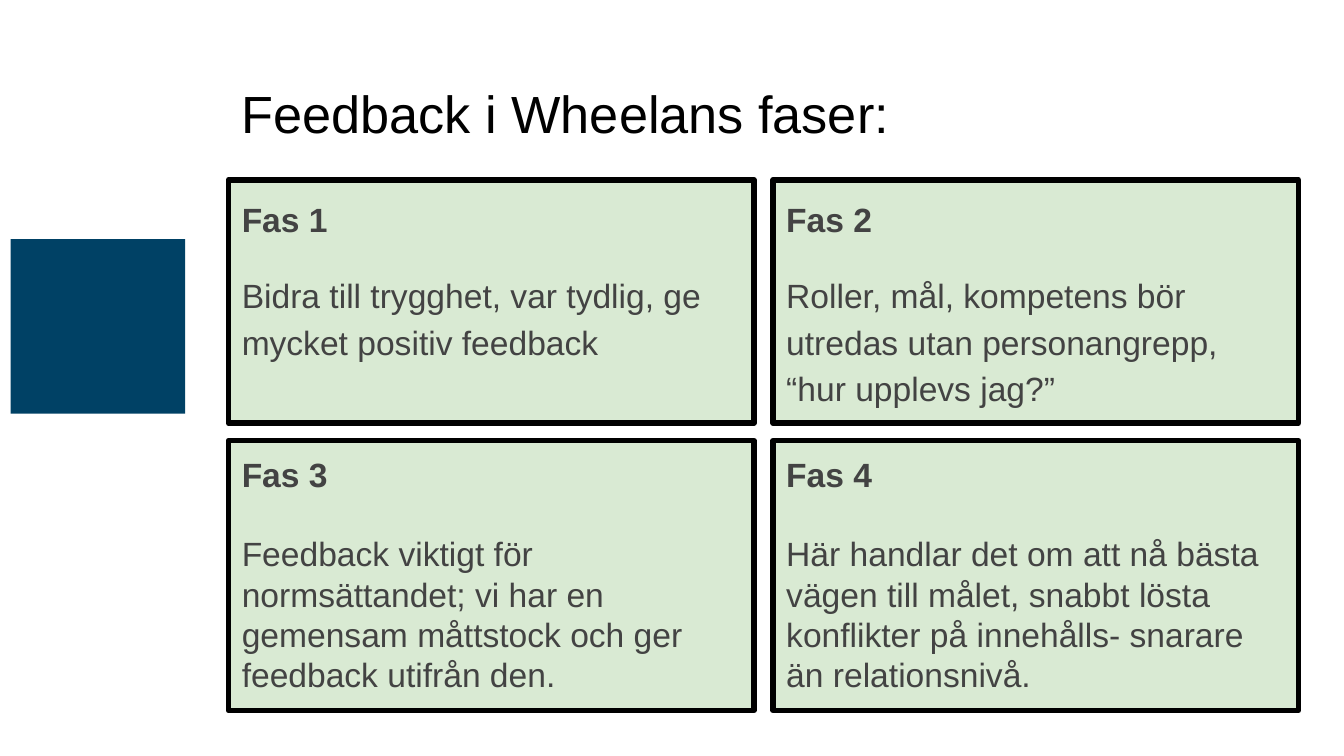
from pptx import Presentation
from pptx.dml.color import RGBColor
from pptx.enum.shapes import MSO_SHAPE
from pptx.enum.text import MSO_ANCHOR, MSO_AUTO_SIZE, PP_ALIGN
from pptx.oxml.ns import qn
from pptx.util import Cm, Pt
from lxml import etree

RECT = MSO_SHAPE.RECTANGLE
TOP, MIDDLE = MSO_ANCHOR.TOP, MSO_ANCHOR.MIDDLE
LEFT = PP_ALIGN.LEFT
NO_FIT = MSO_AUTO_SIZE.NONE

BLACK = RGBColor(0x00, 0x00, 0x00)
GREY = RGBColor(0x43, 0x43, 0x43)
GREEN = RGBColor(0xD9, 0xEA, 0xD3)
NAVY = RGBColor(0x00, 0x41, 0x65)

INSET = Cm(0.25)
TITLE_FONT = {"name": "Arial", "size": Pt(28), "bold": False}
BODY_FONT = {"name": "Arial", "size": Pt(18), "bold": False}
HEAD_FONT = {**BODY_FONT, "bold": True}
LOOSE = {"line_spacing": 1.15, "space_before": Pt(16)}
TIGHT = {"line_spacing": 1.0, "space_before": Pt(21)}

LEFT_EDGE, COLUMN_STEP, CARD_WIDTH = 4.32, 10.29, 9.93
ROWS = [
    (3.4, 4.6, LOOSE, [
        ("Fas 1", "Bidra till trygghet, var tydlig, ge mycket positiv feedback"),
        ("Fas 2", "Roller, mål, kompetens bör utredas utan personangrepp, “hur upplevs jag?”"),
    ]),
    (8.33, 5.1, TIGHT, [
        ("Fas 3", "Feedback viktigt för normsättandet; vi har en gemensam måttstock "
                  "och ger feedback utifrån den."),
        ("Fas 4", "Här handlar det om att nå bästa vägen till målet, snabbt lösta "
                  "konflikter på innehålls- snarare än relationsnivå."),
    ]),
]


def apply(target, values):
    """Set each named attribute on the target."""
    for name, value in values.items():
        setattr(target, name, value)


def prepare_frame(tf, anchor):
    """Give a text frame the common insets, wrapping and anchor."""
    apply(tf, {
        "word_wrap": True, "auto_size": NO_FIT, "vertical_anchor": anchor,
        "margin_left": INSET, "margin_right": INSET,
        "margin_top": INSET, "margin_bottom": INSET,
    })


def write(p, text, font, color, spacing):
    """Write one left-aligned run into a paragraph."""
    apply(p, {"alignment": LEFT, "space_after": Pt(0), **spacing})
    r = p.add_run()
    r.text = text
    apply(r.font, font)
    r.font.color.rgb = color


def add_rect(s, box, color):
    """Add a plain filled rectangle in the box."""
    sp = s.shapes.add_shape(RECT, *map(Cm, box))
    sp.shadow.inherit = False
    sp.fill.solid()
    sp.fill.fore_color.rgb = color
    sp.line.fill.background()
    return sp


def place_title(s, box, text):
    """Move and format the title placeholder."""
    sp = s.shapes.title
    apply(sp, dict(zip(("left", "top", "width", "height"), map(Cm, box))))
    prepare_frame(sp.text_frame, MIDDLE)
    write(sp.text_frame.paragraphs[0], text, TITLE_FONT, BLACK,
          {"line_spacing": 1.15, "space_before": Pt(0)})


def add_phase(s, box, heading, body, spacing):
    """Add a bordered card with a bold heading and a body paragraph."""
    sp = add_rect(s, box, GREEN)
    sp.line.color.rgb = BLACK
    sp.line.width = Pt(3)
    etree.SubElement(sp.line._get_or_add_ln(), qn("a:round"))
    tf = sp.text_frame
    prepare_frame(tf, TOP)
    write(tf.paragraphs[0], heading, HEAD_FONT, GREY, {**spacing, "space_before": Pt(0)})
    write(tf.add_paragraph(), body, BODY_FONT, GREY, spacing)


def add_phase_grid(s):
    """Lay the phase cards out in rows and columns."""
    for top, height, spacing, phases in ROWS:
        for column, (heading, body) in enumerate(phases):
            left = LEFT_EDGE + column * COLUMN_STEP
            add_phase(s, (left, top, CARD_WIDTH, height), heading, body, spacing)


def main():
    """Build and save the slide."""
    prs = Presentation()
    prs.slide_width, prs.slide_height = Cm(25.4), Cm(14.29)
    s = prs.slides.add_slide(prs.slide_layouts[5])
    add_rect(s, (0.2, 4.52, 3.3, 3.3), NAVY)
    place_title(s, (LEFT_EDGE, 1.24, 20.22, 1.6), "Feedback i Wheelans faser:")
    add_phase_grid(s)
    prs.save("out.pptx")


if __name__ == "__main__":
    main()
